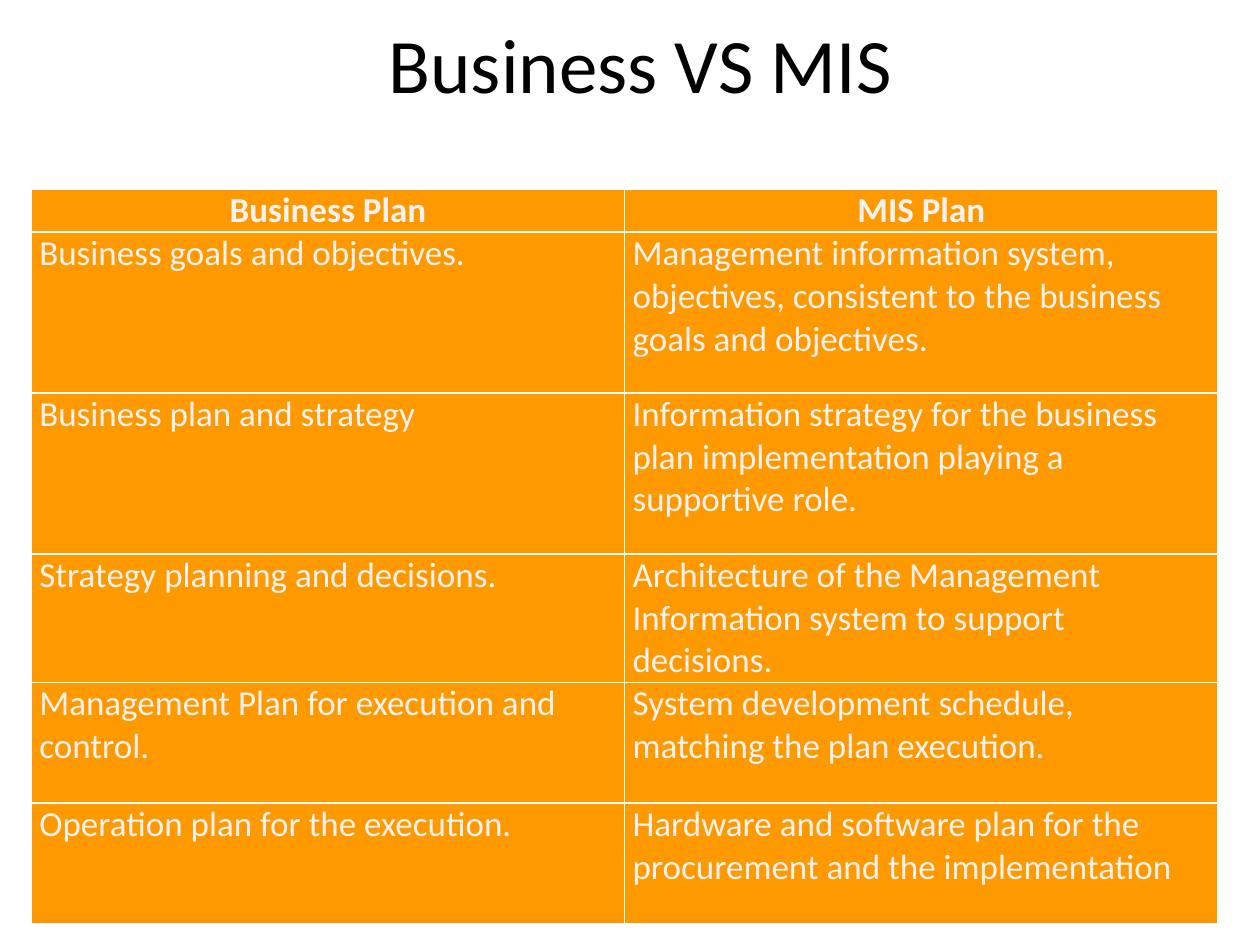
"""Build a slide comparing the business plan with the MIS plan in a table."""
import dataclasses

import lxml.etree
import pptx
import pptx.dml.color
import pptx.enum.text
import pptx.oxml.ns
import pptx.slide
import pptx.table
import pptx.text.text
import pptx.util

COLORS = {"title": "000000", "text": "F2F2F2", "cell": "FF9900", "border": "FFFFFF"}
FONT = "Calibri"
COLUMN_WIDTH = 339


@dataclasses.dataclass(frozen=True)
class PlanRow:
    """One table row: its height in points and the two plans compared."""

    height: float
    business: str
    mis: str
    header: bool = False


ROWS = [
    PlanRow(23, "Business Plan", "MIS Plan", header=True),
    PlanRow(92, "Business goals and objectives.",
            "Management information system, objectives, consistent to the business goals and objectives."),
    PlanRow(92, "Business plan and strategy",
            "Information strategy for the business plan implementation playing a supportive role."),
    PlanRow(69, "Strategy planning and decisions.",
            "Architecture of the Management Information system to support decisions."),
    PlanRow(69, "Management Plan for execution and control.",
            "System development schedule, matching the plan execution."),
    PlanRow(69, "Operation plan for the execution.",
            "Hardware and software plan for the procurement and the implementation"),
]


def add_text(paragraph: pptx.text.text._Paragraph, text: str, size: float,
             color: str, bold: bool = False, centred: bool = False) -> None:
    """Add one formatted run to a paragraph."""
    alignment = pptx.enum.text.PP_ALIGN
    paragraph.alignment = alignment.CENTER if centred else alignment.LEFT
    run = paragraph.add_run()
    run.text = text
    run.font.name = FONT
    run.font.size = pptx.util.Pt(size)
    run.font.bold = bold
    run.font.color.rgb = pptx.dml.color.RGBColor.from_string(COLORS[color])


def set_borders(cell: pptx.table._Cell) -> None:
    """Draw a thin line on all four sides of a cell."""
    qualified = pptx.oxml.ns.qn
    properties = cell._tc.get_or_add_tcPr()
    for position, side in enumerate(("lnL", "lnR", "lnT", "lnB")):
        line = lxml.etree.Element(qualified(f"a:{side}"), w=str(int(pptx.util.Pt(1))))
        fill = lxml.etree.SubElement(line, qualified("a:solidFill"))
        lxml.etree.SubElement(fill, qualified("a:srgbClr"), val=COLORS["border"])
        properties.insert(position, line)


def fill_cell(cell: pptx.table._Cell, text: str, header: bool) -> None:
    """Format a table cell and write its text."""
    cell.margin_left = cell.margin_right = pptx.util.Pt(4.5)
    cell.margin_top = cell.margin_bottom = pptx.util.Pt(0)
    cell.vertical_anchor = pptx.enum.text.MSO_ANCHOR.TOP
    cell.fill.solid()
    cell.fill.fore_color.rgb = pptx.dml.color.RGBColor.from_string(COLORS["cell"])
    set_borders(cell)
    add_text(cell.text_frame.paragraphs[0], text, 20, "text", bold=header, centred=header)


def add_title(slide: pptx.slide.Slide, text: str) -> None:
    """Place the title placeholder and write its text."""
    title = slide.shapes.title
    title.left, title.top = pptx.util.Pt(42), pptx.util.Pt(0)
    title.width, title.height = pptx.util.Pt(648), pptx.util.Pt(72)
    title.text_frame.vertical_anchor = pptx.enum.text.MSO_ANCHOR.MIDDLE
    add_text(title.text_frame.paragraphs[0], text, 44, "title", centred=True)


def add_plan_table(slide: pptx.slide.Slide, rows: list[PlanRow]) -> None:
    """Add the table with one line for each plan row."""
    frame = slide.shapes.add_table(
        len(rows), 2, pptx.util.Pt(18), pptx.util.Pt(108),
        pptx.util.Pt(2 * COLUMN_WIDTH), pptx.util.Pt(sum(row.height for row in rows)))
    table = frame.table
    table.horz_banding = False
    for column in table.columns:
        column.width = pptx.util.Pt(COLUMN_WIDTH)
    for index, row in enumerate(rows):
        table.rows[index].height = pptx.util.Pt(row.height)
        for column_index, text in enumerate((row.business, row.mis)):
            fill_cell(table.cell(index, column_index), text, row.header)


def main() -> None:
    """Create and save the presentation."""
    presentation = pptx.Presentation()
    presentation.slide_width = pptx.util.Pt(720)
    presentation.slide_height = pptx.util.Pt(540)
    slide = presentation.slides.add_slide(presentation.slide_layouts.get_by_name("Title Only"))
    add_title(slide, "Business VS MIS")
    add_plan_table(slide, ROWS)
    presentation.save("out.pptx")


if __name__ == "__main__":
    main()
